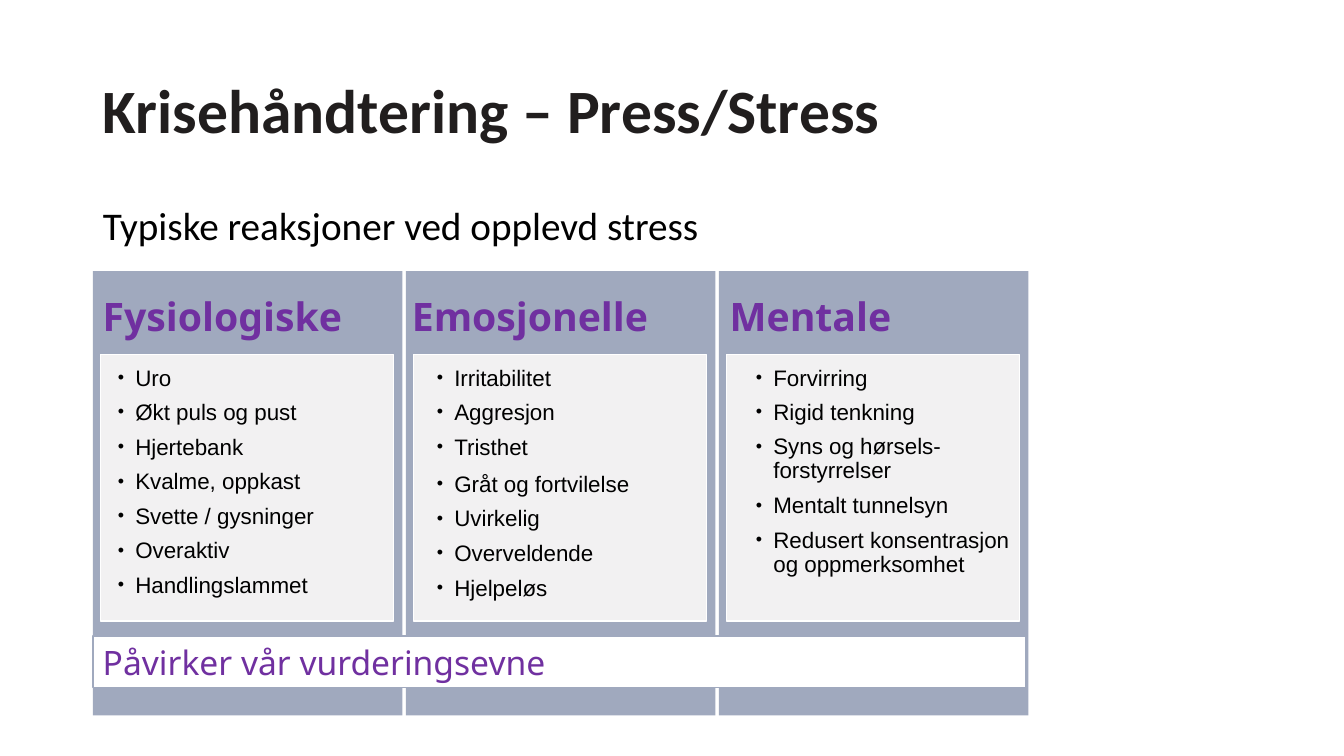
from pptx import Presentation
from pptx.dml.color import RGBColor
from pptx.enum.shapes import MSO_SHAPE as Shape
from pptx.enum.text import MSO_ANCHOR as Anchor, MSO_AUTO_SIZE as AutoSize, PP_ALIGN as Align
from pptx.oxml.ns import qn
from pptx.util import Cm, Pt
from lxml.etree import SubElement

LEFT = 2.34
FULL_WIDTH = 23.52
PANEL_PITCH = 7.89
LIST_PITCH = 8.04
LINE_HEIGHT = 18.4

REACTIONS = [
    ("Fysiologiske", 2.34, [
        ("Uro", 0, 1), ("Økt puls og pust", 0.3, 1), ("Hjertebank", 0.3, 1),
        ("Kvalme, oppkast", 0.3, 1), ("Svette / gysninger", 0.3, 1),
        ("Overaktiv", 0.3, 1), ("Handlingslammet", 0.3, 1)]),
    ("Emosjonelle", 10.13, [
        ("Irritabilitet", 0, 1), ("Aggresjon", 0.3, 1), ("Tristhet", 0.3, 1),
        ("Gråt og fortvilelse", 0.4, 1), ("Uvirkelig", 0.3, 1),
        ("Overveldende", 0.3, 1), ("Hjelpeløs", 0.3, 1)]),
    ("Mentale", 18.14, [
        ("Forvirring", 0, 1), ("Rigid tenkning", 0.3, 1),
        ("Syns og hørsels-forstyrrelser", 0.4, 0.9), ("Mentalt tunnelsyn", 0.4, 0.9),
        ("Redusert konsentrasjon \vog oppmerksomhet", 0.4, 0.9)]),
]


def color(code):
    return RGBColor.from_string(code)


class StressSlide:
    """Holds the slide and its style, with one method per kind of element."""

    BLACK, INK, PURPLE = "000000", "211E1E", "7030A0"
    WHITE, PANEL, CARD = "FFFFFF", "A0A9BE", "F2F1F2"

    def __init__(self, deck):
        self.slide = deck.slides.add_slide(deck.slide_layouts[1])

    def style(self, paragraph, font, size, code, bold=False):
        paragraph.alignment = Align.LEFT
        paragraph.font.name = font
        paragraph.font.size = Pt(size)
        paragraph.font.bold = bold
        paragraph.font.color.rgb = color(code)

    def placeholder(self, index, text, box, anchor, size, code, bold=False):
        holder = self.slide.placeholders[index]
        holder.left, holder.top, holder.width, holder.height = map(Cm, box)
        frame = holder.text_frame
        frame.text = text
        frame.auto_size = AutoSize.NONE
        frame.vertical_anchor = anchor
        line = frame.paragraphs[0]
        self.style(line, "Calibri", size, code, bold)
        line.line_spacing = 0.9
        line.space_before = Pt(0)
        properties = line._p.get_or_add_pPr()
        properties.set("marL", "0")
        properties.set("indent", "0")
        SubElement(properties, qn("a:buNone"))

    def rectangle(self, box, fill, outline=None):
        block = self.slide.shapes.add_shape(Shape.RECTANGLE, *map(Cm, box))
        block.shadow.inherit = False
        block.fill.solid()
        block.fill.fore_color.rgb = color(fill)
        if outline:
            block.line.color.rgb = color(outline)
            block.line.width = Pt(1)
        else:
            block.line.fill.background()
        return block

    def label(self, frame, text, size, bold=False):
        frame.word_wrap = True
        frame.vertical_anchor = Anchor.MIDDLE
        frame.text = text
        self.style(frame.paragraphs[0], "Noto Sans", size, self.PURPLE, bold)

    def text_frame(self, box):
        return self.slide.shapes.add_textbox(*map(Cm, box)).text_frame

    def bullets(self, box, items):
        frame = self.text_frame(box)
        frame.word_wrap = True
        frame.text = "\n".join(text for text, _, _ in items)
        for item, (_, gap, spacing) in zip(frame.paragraphs, items):
            self.style(item, "Arial", 16, self.BLACK)
            item.space_before = Pt(round(gap * LINE_HEIGHT, 1))
            item.line_spacing = spacing
            properties = item._p.get_or_add_pPr()
            properties.set("marL", str(Cm(0.44)))
            properties.set("indent", str(-Cm(0.44)))
            SubElement(properties, qn("a:buSzPct"), val="80000")
            SubElement(properties, qn("a:buFont"), typeface="Arial")
            SubElement(properties, qn("a:buChar"), char="•")


def main():
    deck = Presentation()
    deck.slide_width, deck.slide_height = Cm(33.87), Cm(19.05)
    page = StressSlide(deck)
    page.placeholder(0, "Krisehåndtering – Press/Stress", (LEFT, 1.02, 29.21, 3.68),
                     Anchor.MIDDLE, 44, page.INK, bold=True)
    page.placeholder(1, "Typiske reaksjoner ved opplevd stress", (LEFT, 5.08, FULL_WIDTH, 1.65),
                     Anchor.TOP, 28, page.BLACK)

    for column, (heading, heading_left, items) in enumerate(REACTIONS):
        panel_left = LEFT + column * PANEL_PITCH
        page.rectangle((panel_left, 6.83, 7.8, 11.2), page.PANEL)
        page.rectangle((panel_left + 0.19, 8.94, 7.39, 6.71), page.CARD, page.WHITE)
        page.bullets((2.72 + column * LIST_PITCH, 9.04, 7.14, 6.6), items)
        page.label(page.text_frame((heading_left, 7.24, 7.8, 1.45)), heading, 28, bold=True)

    conclusion = page.rectangle((LEFT, 16.03, FULL_WIDTH, 1.3), page.WHITE, page.PANEL)
    page.label(conclusion.text_frame, "Påvirker vår vurderingsevne", 24)
    deck.save("out.pptx")


if __name__ == "__main__":
    main()
